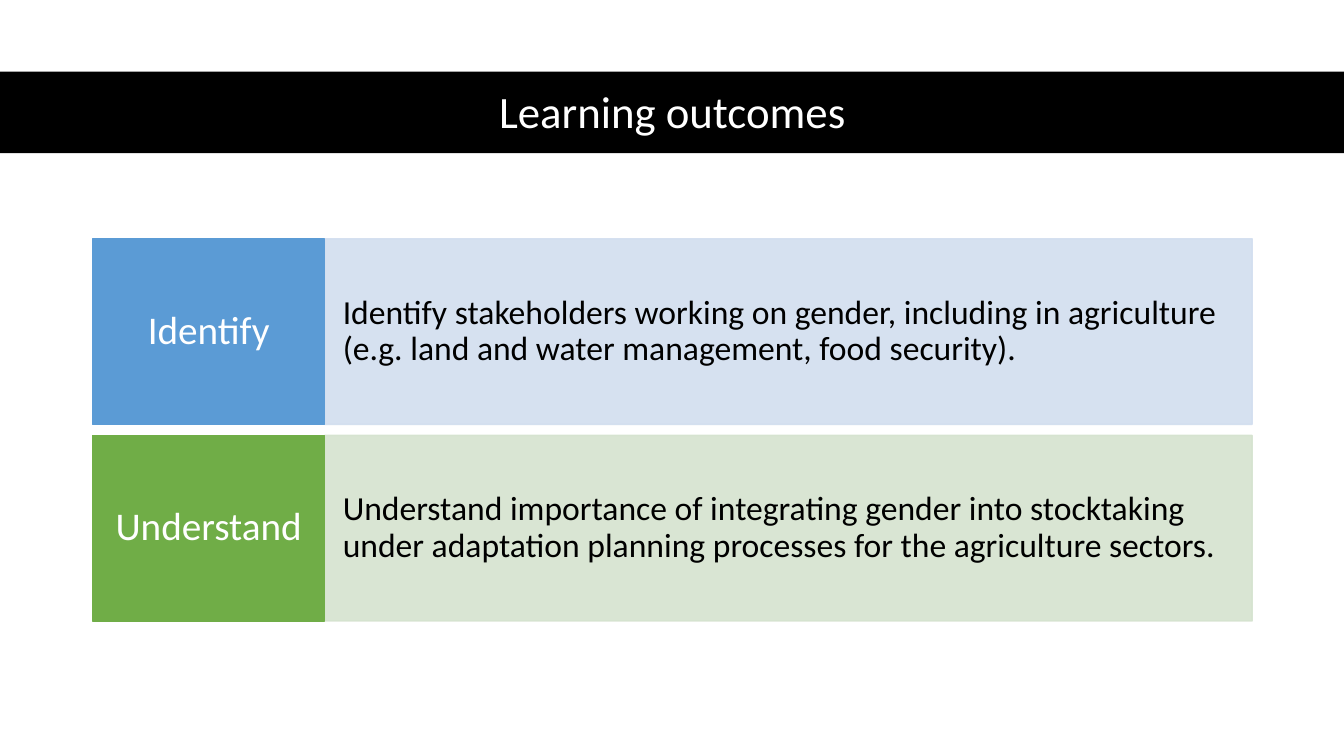
from lxml import etree
from pptx import Presentation
from pptx.dml.color import RGBColor
from pptx.enum.shapes import MSO_SHAPE as Shape
from pptx.enum.text import MSO_ANCHOR as Anchor, PP_ALIGN as Align
from pptx.oxml.ns import qn
from pptx.util import Inches, Pt

BLACK = RGBColor(0x00, 0x00, 0x00)
WHITE = RGBColor(0xFF, 0xFF, 0xFF)
BLUE = RGBColor(0x5B, 0x9B, 0xD5)
PALE_BLUE = RGBColor(0xD2, 0xDE, 0xEF)
GREEN = RGBColor(0x70, 0xAD, 0x47)
PALE_GREEN = RGBColor(0xD5, 0xE3, 0xCF)

# Grid in inches: a label column takes one fifth of the content width
LEFT, WIDTH = 0.92, 11.5
LABEL_WIDTH = WIDTH / 5
TOP, ROW_HEIGHT, ROW_STEP = 2.37, 1.84, 1.95

OUTCOMES = [
    ("Identify",
     "Identify stakeholders working on gender, including in agriculture "
     "(e.g. land and water management, food security).",
     BLUE, PALE_BLUE),
    ("Understand",
     "Understand importance of integrating gender into stocktaking "
     "under adaptation planning processes for the agriculture sectors.",
     GREEN, PALE_GREEN),
]


def add_block(left, top, width, height, color, opacity=100):
    """Add a filled rectangle with a thin border of the same colour."""
    block = page.shapes.add_shape(
        Shape.RECTANGLE, Inches(left), Inches(top), Inches(width), Inches(height))
    block.shadow.inherit = False
    block.fill.solid()
    block.fill.fore_color.rgb = color
    block.line.color.rgb = color
    block.line.width = Pt(1)
    if opacity < 100:
        for tint in block.element.spPr.iter(qn("a:srgbClr")):
            etree.SubElement(tint, qn("a:alpha"), val=str(opacity * 1000))
    return block


def write(box, text, size, color, align, side=0.1, edge=0.05):
    """Put one vertically centred paragraph in a box with the given insets."""
    frame = box.text_frame
    frame.word_wrap = True
    frame.vertical_anchor = Anchor.MIDDLE
    frame.margin_left = frame.margin_right = Inches(side)
    frame.margin_top = frame.margin_bottom = Inches(edge)
    para = frame.paragraphs[0]
    para.alignment = align
    para.line_spacing = 0.9
    span = para.add_run()
    span.text = text
    span.font.name = "Calibri"
    span.font.size = Pt(size)
    span.font.color.rgb = color


deck = Presentation()
deck.slide_width, deck.slide_height = Inches(13.33), Inches(7.5)
page = deck.slides.add_slide(deck.slide_layouts[6])

band = add_block(0, 0.71, 13.33, 0.81, BLACK)
band.line.fill.background()
title = page.shapes.add_textbox(
    Inches(LEFT), Inches(0.74), Inches(WIDTH), Inches(0.78))
write(title, "Learning outcomes", 32, WHITE, Align.CENTER)

for row, (verb, outcome, strong, pale) in enumerate(OUTCOMES):
    top = TOP + row * ROW_STEP
    panel = add_block(LEFT + LABEL_WIDTH, top, WIDTH - LABEL_WIDTH, ROW_HEIGHT,
                      pale, opacity=90)
    write(panel, outcome, 24, BLACK, Align.LEFT, side=0.18, edge=0.47)
    label = add_block(LEFT, top, LABEL_WIDTH, ROW_HEIGHT, strong)
    write(label, verb, 28, WHITE, Align.CENTER, side=0.12, edge=0.18)

deck.save("out.pptx")
